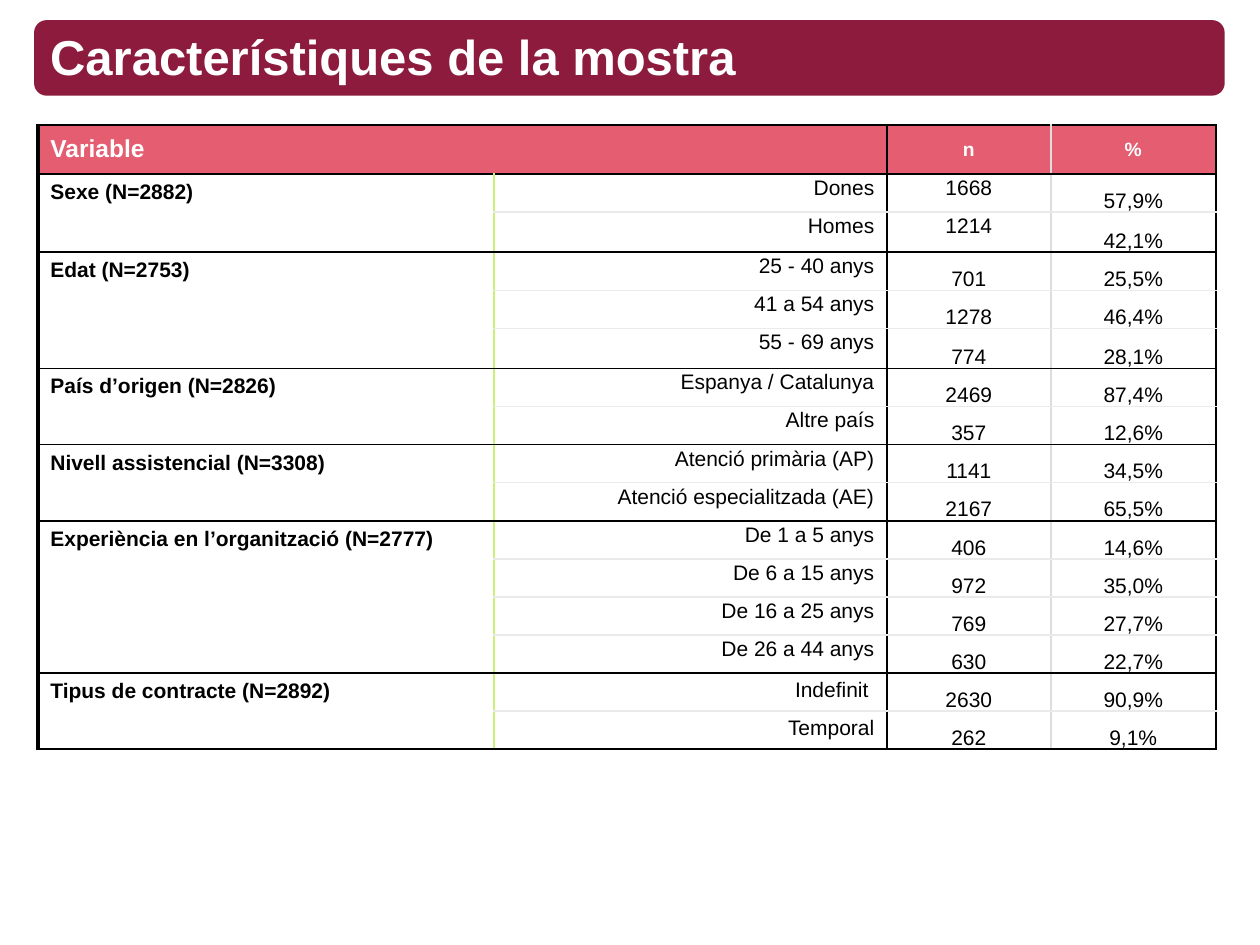
"""Build the slide that describes the survey sample in a grouped table."""
from dataclasses import dataclass

from lxml import etree
from pptx import Presentation
from pptx import util as u
from pptx.dml.color import RGBColor
from pptx.enum import shapes, text
from pptx.oxml.ns import qn


@dataclass(frozen=True)
class Theme:
    font: str = "Arial"
    banner: str = "8D1B3D"
    header: str = "E55D70"
    light: str = "FFFFFF"
    dark: str = "000000"
    label_rule: str = "CAF278"
    value_rule: str = "DDDDDD"
    row_rule: str = "EAEAEA"
    title_size: float = 28
    variable_size: float = 14
    header_size: float = 11
    body_size: float = 12
    thin: float = 1
    thick: float = 2.25


THEME = Theme()
GRID_COLUMNS, GRID_ROWS = 100, 75
COLUMN_WIDTHS = [36.2, 31.2, 13, 13.1]
HEADER_HEIGHT, ROW_HEIGHT, TALL_ROW_HEIGHT = 3.9, 3.02, 3.2
TALL_ROWS = (2, 5)
TIGHT = dict(margin_left=u.Inches(0.01), margin_right=u.Inches(0.01),
             margin_top=u.Inches(0.01), margin_bottom=0)
TOP, MIDDLE, BOTTOM = (text.MSO_ANCHOR.TOP, text.MSO_ANCHOR.MIDDLE,
                       text.MSO_ANCHOR.BOTTOM)
LEFT, CENTER, RIGHT = text.PP_ALIGN.LEFT, text.PP_ALIGN.CENTER, text.PP_ALIGN.RIGHT

GROUPS = [
    ("Sexe (N=2882)", [("Dones", "1668", "57,9%"), ("Homes", "1214", "42,1%")]),
    ("Edat (N=2753)", [("25 - 40 anys", "701", "25,5%"),
                       ("41 a 54 anys", "1278", "46,4%"),
                       ("55 - 69 anys", "774", "28,1%")]),
    ("País d’origen (N=2826)", [("Espanya / Catalunya", "2469", "87,4%"),
                                ("Altre país", "357", "12,6%")]),
    ("Nivell assistencial (N=3308)", [("Atenció primària (AP)", "1141", "34,5%"),
                                      ("Atenció especialitzada (AE)", "2167", "65,5%")]),
    ("Experiència en l’organització (N=2777)", [("De 1 a 5 anys", "406", "14,6%"),
                                                ("De 6 a 15 anys", "972", "35,0%"),
                                                ("De 16 a 25 anys", "769", "27,7%"),
                                                ("De 26 a 44 anys", "630", "22,7%")]),
    ("Tipus de contracte (N=2892)", [("Indefinit ", "2630", "90,9%"),
                                     ("Temporal", "262", "9,1%")]),
]


def assign(target, values):
    for name, value in values.items():
        setattr(target, name, value)


class SlideBuilder:
    def __init__(self, presentation, theme):
        self.theme = theme
        self.column = presentation.slide_width / GRID_COLUMNS
        self.row = presentation.slide_height / GRID_ROWS
        self.slide = presentation.slides.add_slide(presentation.slide_layouts[6])

    def box(self, left, top, width, height):
        return (round(left * self.column), round(top * self.row),
                round(width * self.column), round(height * self.row))

    def add_words(self, frame, words, size, color, bold=False, **layout):
        paragraph = frame.paragraphs[0]
        assign(paragraph, layout)
        run = paragraph.add_run()
        run.text = words
        assign(run.font, dict(name=self.theme.font, size=u.Pt(size), bold=bold))
        run.font.color.rgb = RGBColor.from_string(color)

    def banner(self, *place):
        shape = self.slide.shapes.add_shape(
            shapes.MSO_SHAPE.ROUNDED_RECTANGLE, *self.box(*place))
        shape.shadow.inherit = False
        shape.fill.solid()
        shape.fill.fore_color.rgb = RGBColor.from_string(self.theme.banner)
        shape.line.fill.background()

    def title(self, words, *place):
        frame = self.slide.shapes.add_textbox(*self.box(*place)).text_frame
        assign(frame, dict(word_wrap=True, vertical_anchor=MIDDLE))
        self.add_words(frame, words, self.theme.title_size, self.theme.light, bold=True)

    def table(self, left, top, widths, heights):
        place = self.box(left, top, sum(widths), sum(heights))
        table = self.slide.shapes.add_table(len(heights), len(widths), *place).table
        assign(table, dict(first_row=False, horz_banding=False))
        for column, width in zip(table.columns, widths):
            column.width = round(width * self.column)
        for row, height in zip(table.rows, heights):
            row.height = round(height * self.row)
        return table

    def borders(self, cell, **sides):
        properties = cell._tc.get_or_add_tcPr()
        for side in "LRTB":
            color, width = sides[side]
            line = etree.SubElement(properties, qn(f"a:ln{side}"), w=str(u.Pt(width)))
            fill = etree.SubElement(line, qn("a:solidFill"))
            etree.SubElement(fill, qn("a:srgbClr"), val=color)

    def cell(self, cell, words, column, first, last, fill=None, anchor=TOP,
             margins=None, right=None, **style):
        theme = self.theme
        rules = [(theme.dark, theme.thick)] + [
            (color, theme.thin) for color in
            (theme.label_rule, theme.dark, theme.value_rule, theme.dark)]
        edge, inner = (theme.dark, theme.thin), (theme.row_rule, theme.thin)
        self.borders(cell, L=rules[column], R=right or rules[column + 1],
                     T=edge if first else inner, B=edge if last else inner)
        if fill:
            cell.fill.solid()
            cell.fill.fore_color.rgb = RGBColor.from_string(fill)
        else:
            cell.fill.background()
        assign(cell, dict(vertical_anchor=anchor, **(margins or {})))
        self.add_words(cell.text_frame, words, **style)

    def header(self, table):
        theme = self.theme
        table.cell(0, 0).merge(table.cell(0, 1))
        common = dict(first=True, last=True, fill=theme.header, anchor=MIDDLE,
                      color=theme.light, bold=True)
        self.cell(table.cell(0, 0), "Variable", 0, right=(theme.dark, theme.thin),
                  size=theme.variable_size, **common)
        for column, words in ((2, "n"), (3, "%")):
            self.cell(table.cell(0, column), words, column, alignment=CENTER,
                      size=theme.header_size, **common)

    def group(self, table, start, name, entries):
        style = dict(size=self.theme.body_size, color=self.theme.dark)
        end = start + len(entries) - 1
        table.cell(start, 0).merge(table.cell(end, 0))
        self.cell(table.cell(start, 0), name, 0, True, True, bold=True,
                  alignment=LEFT, **style)
        label_anchor = MIDDLE if name == GROUPS[-1][0] else TOP
        bottom = dict(anchor=BOTTOM, margins=TIGHT)
        count = {} if name == GROUPS[0][0] else bottom
        formats = [dict(alignment=RIGHT, anchor=label_anchor),
                   dict(alignment=CENTER, **count), dict(alignment=CENTER, **bottom)]
        for row, entry in enumerate(entries, start):
            for column, (words, layout) in enumerate(zip(entry, formats), 1):
                self.cell(table.cell(row, column), words, column, row == start,
                          row == end, line_spacing=0.8, **layout, **style)
        return end + 1


def main():
    presentation = Presentation()
    assign(presentation, dict(slide_width=u.Inches(10), slide_height=u.Inches(7.5)))
    builder = SlideBuilder(presentation, THEME)
    builder.banner(2.7, 1.6, 94.5, 6)
    builder.title("Característiques de la mostra", 3, 2.1, 90.7, 4.7)
    count = sum(len(entries) for _, entries in GROUPS)
    heights = [HEADER_HEIGHT] + [TALL_ROW_HEIGHT if row in TALL_ROWS else ROW_HEIGHT
                                 for row in range(1, count + 1)]
    table = builder.table(3, 9.9, COLUMN_WIDTHS, heights)
    builder.header(table)
    row = 1
    for name, entries in GROUPS:
        row = builder.group(table, row, name, entries)
    presentation.save("out.pptx")


if __name__ == "__main__":
    main()
